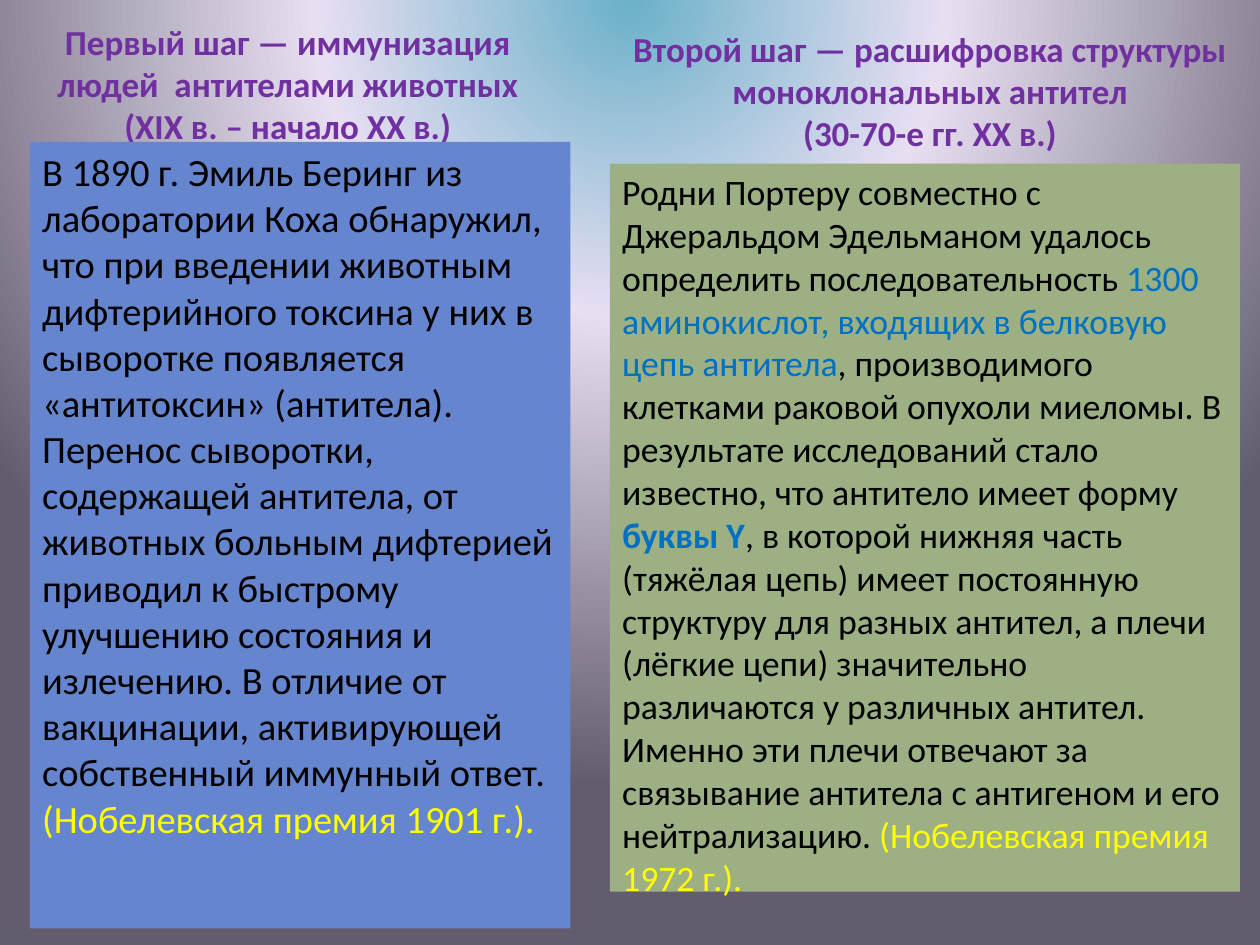
from lxml import etree
from pptx import Presentation
from pptx.dml.color import RGBColor
from pptx.enum.shapes import MSO_SHAPE
from pptx.enum.text import MSO_ANCHOR, PP_ALIGN
from pptx.oxml.ns import qn
from pptx.util import Pt

RECTANGLE = MSO_SHAPE.RECTANGLE
TOP, MIDDLE = MSO_ANCHOR.TOP, MSO_ANCHOR.MIDDLE
LEFT, CENTER = PP_ALIGN.LEFT, PP_ALIGN.CENTER

COLORS = {
    "heading": "7030A0",
    "text": "000000",
    "accent": "0070C0",
    "prize": "FFFF00",
    "blue panel": "6585CF",
    "green panel": "9CB084",
    "glow": "6BB1C9",
    "haze": "E7DEF2",
    "dusk": "635B6E",
}


def rgb(name):
    return RGBColor.from_string(COLORS[name])


class SlideBuilder:
    def __init__(self, slide, font_name):
        self.slide = slide
        self.font_name = font_name

    def radial_background(self, stops, focus):
        """Fill with (percent, colour) stops around a focus given as edge insets in percent."""
        self.slide.background.fill.gradient()
        gradient = self.slide.element.find(".//" + qn("a:gradFill"))
        for child in list(gradient):
            gradient.remove(child)
        stop_list = etree.SubElement(gradient, qn("a:gsLst"))
        for percent, color in stops:
            stop = etree.SubElement(stop_list, qn("a:gs"), pos=str(percent * 1000))
            etree.SubElement(stop, qn("a:srgbClr"), val=COLORS[color])
        circle = etree.SubElement(gradient, qn("a:path"), path="circle")
        insets = {side: str(percent * 1000) for side, percent in focus.items()}
        etree.SubElement(circle, qn("a:fillToRect"), **insets)

    def style_paragraph(self, paragraph, size, color, alignment, bold=False):
        paragraph.alignment = alignment
        font = paragraph.font
        font.name, font.size, font.bold = self.font_name, Pt(size), bold
        font.color.rgb = rgb(color)

    def heading(self, box, lines, anchor):
        shape = self.slide.shapes.add_textbox(*map(Pt, box))
        frame = shape.text_frame
        frame.word_wrap = True
        frame.vertical_anchor = anchor
        frame.text = "\n".join(lines)
        for paragraph in frame.paragraphs:
            self.style_paragraph(paragraph, 20, "heading", CENTER, bold=True)

    def panel(self, box, fill, size, pieces):
        """Draw a filled panel; each piece of its text is (text, colour, bold)."""
        shape = self.slide.shapes.add_shape(RECTANGLE, *map(Pt, box))
        shape.shadow.inherit = False
        shape.fill.solid()
        shape.fill.fore_color.rgb = rgb(fill)
        shape.line.fill.background()
        frame = shape.text_frame
        frame.word_wrap = True
        frame.vertical_anchor = TOP
        paragraph = frame.paragraphs[0]
        self.style_paragraph(paragraph, size, "text", LEFT)
        for text, color, bold in pieces:
            run = paragraph.add_run()
            run.text = text
            run.font.color.rgb = rgb(color)
            run.font.bold = bold


def main():
    presentation = Presentation()
    presentation.slide_width, presentation.slide_height = Pt(720), Pt(540)
    slide = presentation.slides.add_slide(presentation.slide_layouts[6])
    builder = SlideBuilder(slide, "Calibri")

    builder.radial_background(
        [(0, "glow"), (40, "haze"), (100, "dusk")],
        {"l": 50, "t": -80, "r": 50, "b": 180},
    )

    builder.heading(
        (25, 26, 279, 44),
        ["Первый шаг — иммунизация людей  антителами животных (XIX в. – начало XX в.)"],
        MIDDLE,
    )
    builder.panel((17, 81, 309, 449.5), "blue panel", 22, [
        ("В 1890 г. Эмиль Беринг из лаборатории Коха обнаружил, что при введении "
         "животным дифтерийного токсина у них в сыворотке появляется «антитоксин» "
         "(антитела). Перенос сыворотки, содержащей антитела, от животных больным "
         "дифтерией приводил к быстрому улучшению состояния и излечению. В отличие "
         "от вакцинации, активирующей собственный иммунный ответ. ", "text", False),
        ("(Нобелевская премия 1901 г.).", "prize", False),
    ])

    builder.heading(
        (354, 12, 355, 80),
        ["Второй шаг — расшифровка структуры моноклональных антител",
         "(30-70-е гг. XX в.)"],
        TOP,
    )
    builder.panel((348.5, 93.5, 360, 416), "green panel", 20.4, [
        ("Родни Портеру совместно с Джеральдом Эдельманом удалось определить "
         "последовательность ", "text", False),
        ("1300 аминокислот, входящих в белковую цепь антитела", "accent", False),
        (", производимого клетками раковой опухоли миеломы. В результате "
         "исследований стало известно, что антитело имеет форму ", "text", False),
        ("буквы Y", "accent", True),
        (", в которой нижняя часть (тяжёлая цепь) имеет постоянную структуру для "
         "разных антител, а плечи (лёгкие цепи) значительно различаются у различных "
         "антител. Именно эти плечи отвечают за связывание антитела с антигеном и "
         "его нейтрализацию. ", "text", False),
        ("(Нобелевская премия 1972 г.).", "prize", False),
    ])

    presentation.save("out.pptx")


if __name__ == "__main__":
    main()
